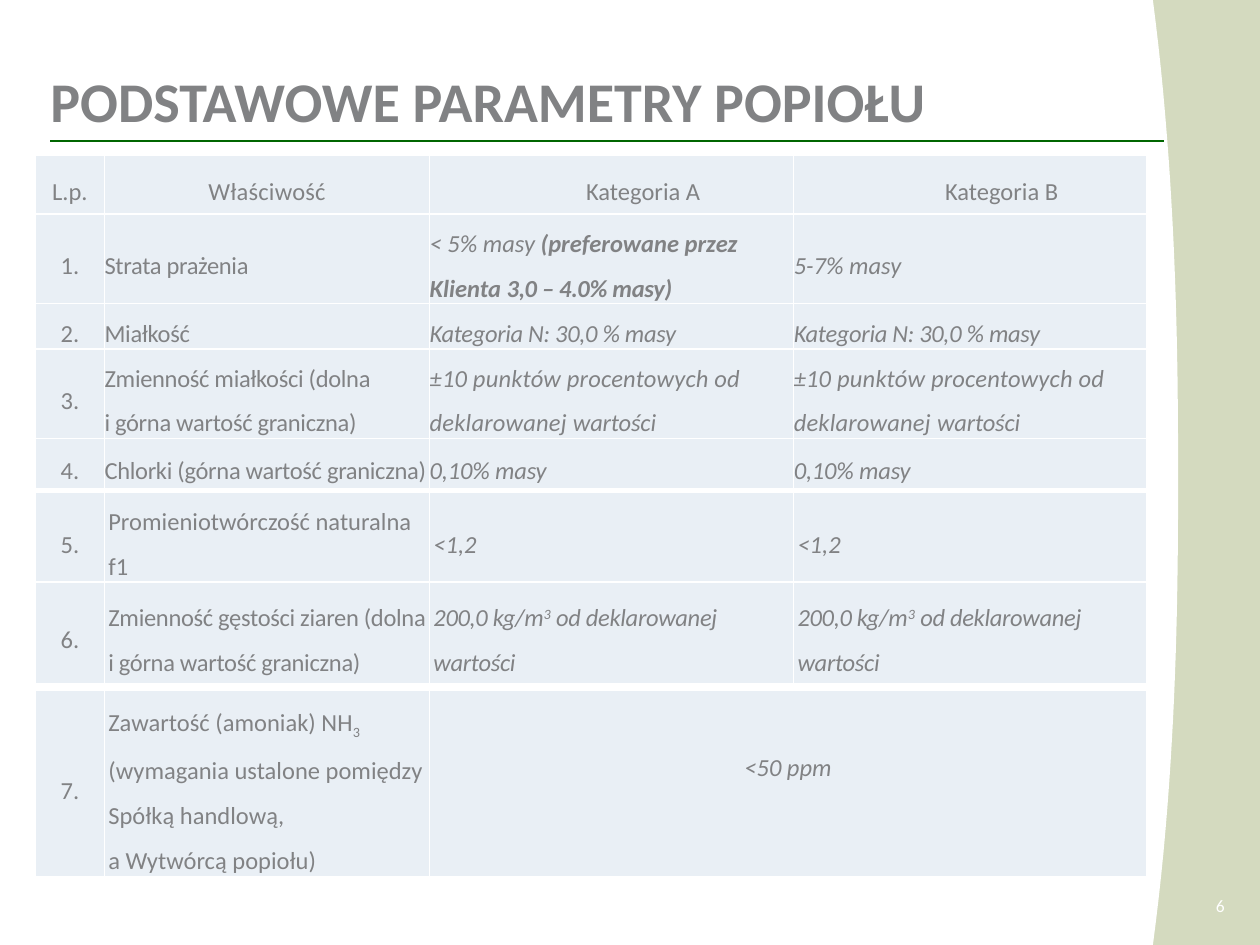
"""Build the slide with the table of basic ash parameters."""
from pptx import Presentation
from pptx.dml.color import RGBColor
from pptx.enum import shapes, text
from pptx.oxml import parse_xml
from pptx.oxml.ns import nsdecls
from pptx.util import Inches, Pt

GREY = RGBColor(0x81, 0x82, 0x84)
WHITE = RGBColor(0xFF, 0xFF, 0xFF)
SAGE = RGBColor(0xD4, 0xDA, 0xBF)
GREEN = RGBColor(0x00, 0x66, 0x00)
PALE = RGBColor(0xE9, 0xEF, 0xF5)
FONT = "Calibri"
CENTER = text.PP_ALIGN.CENTER
LEFT = text.PP_ALIGN.LEFT


def add_span(para, words, size, color, flags="", spacing=0):
    """Add one run; flags are b, i, ^ (superscript) and _ (subscript)."""
    span = para.add_run()
    span.text = words
    span.font.name = FONT
    span.font.size = Pt(size)
    span.font.color.rgb = color
    span.font.bold = "b" in flags
    span.font.italic = "i" in flags
    properties = span.font._element
    if spacing:
        properties.set("spc", str(round(spacing * 100)))
    if "^" in flags:
        properties.set("baseline", "30000")
    if "_" in flags:
        properties.set("baseline", "-25000")


def fill_cell(cell, paragraphs, align, margin):
    """Write paragraphs of (words, flags, spacing) runs and style the cell."""
    cell.fill.solid()
    cell.fill.fore_color.rgb = PALE
    cell.vertical_anchor = text.MSO_ANCHOR.MIDDLE
    cell.margin_left = cell.margin_right = Inches(margin)
    cell.margin_top = cell.margin_bottom = 0
    for index, runs in enumerate(paragraphs):
        frame = cell.text_frame
        para = frame.add_paragraph() if index else frame.paragraphs[0]
        para.alignment = align
        para.line_spacing = 1.5
        for words, flags, spacing in runs:
            for part, line in enumerate(words.split("\n")):
                if part:
                    para.add_line_break()
                add_span(para, line, 14, GREY, flags, spacing)
    properties = cell._tc.get_or_add_tcPr()
    for index, side in enumerate(("lnL", "lnR", "lnT", "lnB")):
        properties.insert(index, parse_xml(
            f'<a:{side} {nsdecls("a")} w="12700"><a:solidFill>'
            f'<a:srgbClr val="{WHITE}"/></a:solidFill></a:{side}>'))


deck = Presentation()
deck.slide_width, deck.slide_height = Inches(10), Inches(7.5)
page = deck.slides.add_slide(deck.slide_layouts[5])
page.background.fill.solid()
page.background.fill.fore_color.rgb = SAGE

upper = ((9.15, 0), (9.34, 1.45), (9.35, 2.89), (9.35, 3.72))
lower = ((9.35, 3.72), (9.35, 4.55), (9.35, 6.02), (9.15, 7.5))
outline = []
for curve in (upper, lower):
    for step in range(25):
        t = step / 24
        weights = ((1 - t) ** 3, 3 * t * (1 - t) ** 2, 3 * t * t * (1 - t), t ** 3)
        outline.append([Inches(sum(w * point[axis] for w, point in zip(weights, curve)))
                        for axis in (0, 1)])
builder = page.shapes.build_freeform(0, 0)
builder.add_line_segments(outline + [(0, Inches(7.5))], close=True)
panel = builder.convert_to_shape()
panel.shadow.inherit = False
panel.fill.solid()
panel.fill.fore_color.rgb = WHITE
panel.line.fill.background()

rule = page.shapes.add_connector(shapes.MSO_CONNECTOR.STRAIGHT, Inches(0.4),
                                 Inches(1.12), Inches(9.24), Inches(1.12))
rule.line.color.rgb = GREEN
rule.line.width = Pt(1)
rule._element.spPr.append(parse_xml(f'<a:effectLst {nsdecls("a")}/>'))

title = page.shapes.title
page.shapes._spTree.append(title._element)
title.left, title.top = Inches(0.4), Inches(0.62)
title.width, title.height = Inches(8.04), Inches(0.44)
title.fill.solid()
title.fill.fore_color.rgb = WHITE
frame = title.text_frame
frame.margin_left = frame.margin_right = frame.margin_top = frame.margin_bottom = 0
frame.vertical_anchor = text.MSO_ANCHOR.BOTTOM
frame.auto_size = text.MSO_AUTO_SIZE.NONE
para = frame.paragraphs[0]
para.alignment = LEFT
para.line_spacing = 0.8
add_span(para, "PODSTAWOWE PARAMETRY POPIOŁU", 32, GREY, "b")

fineness = [[("Kategoria N: 30,0 % masy", "i", -0.2)]]
variation = [[("±10 punktów procentowych od deklarowanej ", "i", 0.1),
              ("wartości", "i", -0.1)]]
chlorides = [[("0,10% masy", "i", -0.1)]]
activity = [[("<1,2", "i", 0)]]
density = [[("200,0 kg/m", "i", -0.2), ("3", "i^", -0.2),
            (" od deklarowanej wartości", "i", -0.2)]]

main_rows = [
    [[[("L.p.", "", 0)]], [[("Właściwość", "", 0.1)]],
     [[("Kategoria A", "", 0)]], [[("Kategoria B", "", 0)]]],
    [[[("1.", "", 0)]], [[("Strata prażenia", "", -0.2)]],
     [[("< 5% masy ", "i", 0), ("(preferowane przez Klienta ", "bi", 0),
       ("3,0 – 4.0% masy)", "bi", -0.2)]],
     [[("5-7% masy", "i", 0)]]],
    [[[("2.", "", 0)]], [[("Miałkość", "", -0.2)]], fineness, fineness],
    [[[("3.", "", 0)]],
     [[("Zmienność miałkości (dolna \ni górna wartość graniczna)", "", -0.2)]],
     variation, variation],
    [[[("4.", "", 0)]], [[("Chlorki (górna wartość graniczna)", "", -0.2)]],
     chlorides, chlorides],
]
middle_rows = [
    [[[("5.", "", 0)]], [[("Promieniotwórczość naturalna f1", "", 0)]],
     activity, activity],
    [[[("6.", "", 0)]],
     [[("Zmienność gęstości ziaren (dolna i górna wartość graniczna)", "", -0.2)]],
     density, density],
]
last_rows = [
    [[[("7.", "", 0)]],
     [[("Zawartość (amoniak) NH", "", 0), ("3", "_", 0)],
      [("(wymagania ustalone pomiędzy Spółką handlową,", "", 0)],
      [("a Wytwórcą popiołu)", "", 0)]],
     [[("<50 ppm", "i", 0)]]],
]

four_columns = (0.55, 2.58, 2.89, 2.8)
three_columns = (0.55, 2.58, 5.69)
tables = []
for top, widths, heights, margin, rows in (
        (1.23, four_columns, (0.47, 0.71, 0.36, 0.71, 0.4), 0, main_rows),
        (3.91, four_columns, (0.71, 0.81), 0.03, middle_rows),
        (5.48, three_columns, (1.48,), 0.03, last_rows)):
    table = page.shapes.add_table(len(rows), len(widths), Inches(0.28), Inches(top),
                                  Inches(sum(widths)), Inches(sum(heights))).table
    table.first_row = table.horz_banding = False
    for column, width in zip(table.columns, widths):
        column.width = Inches(width)
    for row, height, contents in zip(table.rows, heights, rows):
        row.height = Inches(height)
        for index, (cell, paragraphs) in enumerate(zip(row.cells, contents)):
            fill_cell(cell, paragraphs, LEFT if index else CENTER, margin)
    tables.append(table)

for index, cell in enumerate(tables[0].rows[0].cells):
    cell.text_frame.paragraphs[0].alignment = CENTER
    if index > 1:
        cell.margin_left = Inches(0.5)
limit = tables[2].cell(0, 2)
limit.text_frame.paragraphs[0].alignment = CENTER
limit.margin_bottom = Inches(0.36)

box = page.shapes.add_textbox(Inches(9.48), Inches(7.12), Inches(0.24), Inches(0.15))
frame = box.text_frame
frame.margin_left = frame.margin_right = frame.margin_top = frame.margin_bottom = 0
frame.word_wrap = False
para = frame.paragraphs[0]
para.alignment = text.PP_ALIGN.RIGHT
para.line_spacing = 0.9
add_span(para, "6", 10, WHITE)

deck.save("out.pptx")
